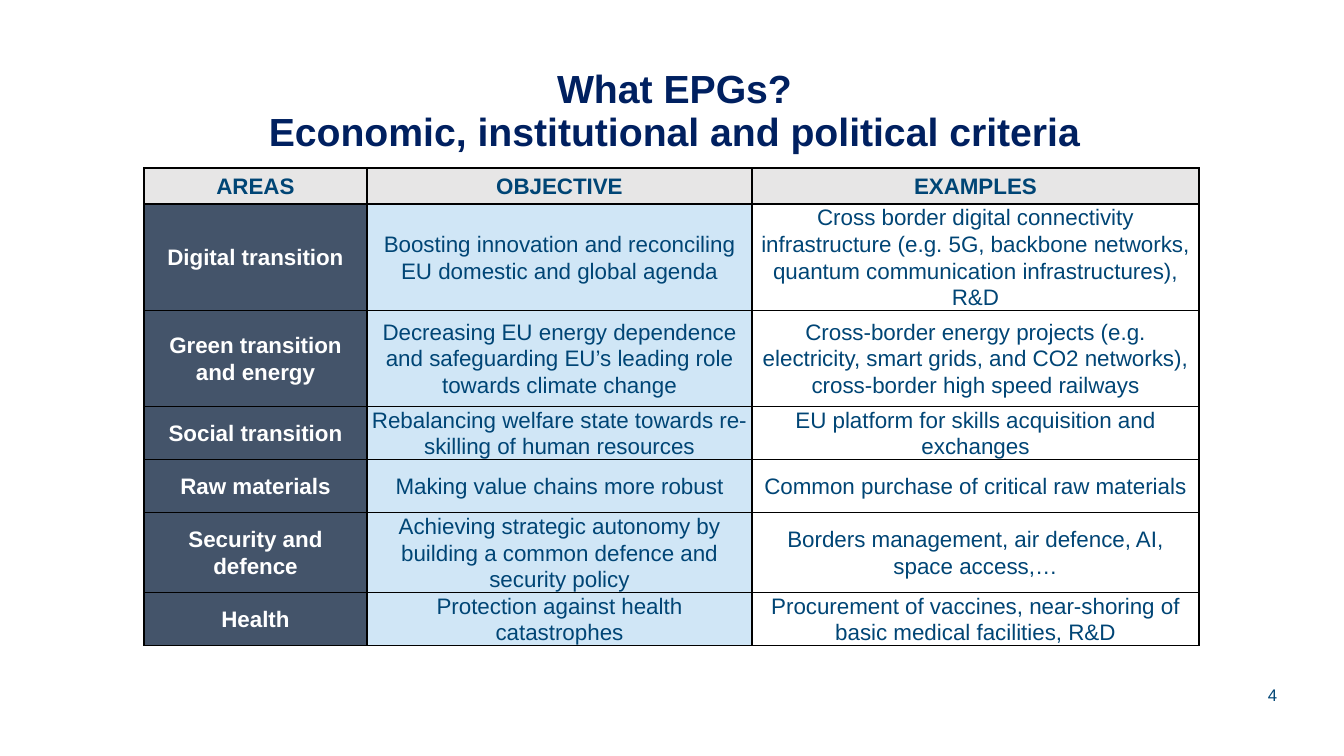
from dataclasses import dataclass

from lxml import etree
from pptx import Presentation, util as u
from pptx.dml.color import RGBColor
from pptx.enum import text
from pptx.oxml import ns

PX_PER_INCH = 100.8


@dataclass(frozen=True)
class Theme:
    font: str = "Arial"
    title: str = "002060"
    ink: str = "004575"
    area_ink: str = "FFFFFF"
    border: str = "000000"
    header_fill: str = "E7E6E6"
    area_fill: str = "44546A"
    objective_fill: str = "D0E6F6"
    title_size: int = 28
    table_size: int = 16
    number_size: int = 12


THEME = Theme()
TITLE = ["What EPGs?", "Economic, institutional and political criteria"]
HEADINGS = ("AREAS", "OBJECTIVE", "EXAMPLES")
PROJECTS = [
    ("Digital transition",
     "Boosting innovation and reconciling EU domestic and global agenda",
     "Cross border digital connectivity infrastructure (e.g. 5G, backbone networks, "
     "quantum communication infrastructures), R&D"),
    ("Green transition and energy",
     "Decreasing EU energy dependence and safeguarding EU’s leading role towards climate change",
     "Cross-border energy projects (e.g. electricity, smart grids, and CO2 networks), "
     "cross-border high speed railways"),
    ("Social transition",
     "Rebalancing welfare state towards re-skilling of human resources",
     "EU platform for skills acquisition and exchanges"),
    ("Raw materials",
     "Making value chains more robust",
     "Common purchase of critical raw materials"),
    ("Security and defence",
     "Achieving strategic autonomy by building a common defence and security policy",
     "Borders management, air defence, AI, space access,…"),
    ("Health",
     "Protection against health catastrophes",
     "Procurement of vaccines, near-shoring of basic medical facilities, R&D"),
]
COLUMN_WIDTHS = (223, 385, 447)
ROW_HEIGHTS = (36, 96, 96, 53, 53, 72, 53)


def px(length):
    return u.Inches(length / PX_PER_INCH)


def style(paragraph, size, color, bold=False, align=text.PP_ALIGN.CENTER):
    paragraph.alignment = align
    paragraph.font.name = THEME.font
    paragraph.font.size = u.Pt(size)
    paragraph.font.bold = bold
    paragraph.font.color.rgb = RGBColor.from_string(color)


def place(shape, box):
    shape.left, shape.top, shape.width, shape.height = map(px, box)


def add_title(slide, box):
    title = slide.shapes.title
    place(title, box)
    frame = title.text_frame
    frame.text = "\n".join(TITLE)
    frame.word_wrap = True
    frame.auto_size = text.MSO_AUTO_SIZE.NONE
    frame.vertical_anchor = text.MSO_ANCHOR.TOP
    frame.margin_left = frame.margin_right = px(7)
    frame.margin_top = frame.margin_bottom = px(4)
    for line in frame.paragraphs:
        style(line, THEME.title_size, THEME.title, bold=True)
        line.line_spacing = 0.9
        line.space_before = u.Pt(0)


def add_borders(cell):
    properties = cell._tc.get_or_add_tcPr()
    for side in ("lnL", "lnR", "lnT", "lnB"):
        line = etree.SubElement(properties, ns.qn(f"a:{side}"), w=str(u.Pt(1)))
        fill = etree.SubElement(line, ns.qn("a:solidFill"))
        etree.SubElement(fill, ns.qn("a:srgbClr"), val=THEME.border)


def fill_cell(cell, wording, fill, ink, bold):
    cell.text = wording
    cell.vertical_anchor = text.MSO_ANCHOR.MIDDLE
    cell.margin_left = cell.margin_right = px(3)
    cell.margin_top = cell.margin_bottom = 0
    paragraph = cell.text_frame.paragraphs[0]
    style(paragraph, THEME.table_size, ink, bold)
    paragraph.line_spacing = 1.07
    paragraph.space_after = u.Pt(6)
    add_borders(cell)
    if fill:
        cell.fill.solid()
        cell.fill.fore_color.rgb = RGBColor.from_string(fill)
    else:
        cell.fill.background()


def add_criteria(slide, box):
    rows = [HEADINGS, *PROJECTS]
    criteria = slide.shapes.add_table(len(rows), len(HEADINGS), *map(px, box)).table
    criteria.horz_banding = False
    criteria.first_row = False
    for column, width in zip(criteria.columns, COLUMN_WIDTHS):
        column.width = px(width)
    for row, height in zip(criteria.rows, ROW_HEIGHTS):
        row.height = px(height)
    header_look = (THEME.header_fill, THEME.ink, True)
    column_looks = (
        (THEME.area_fill, THEME.area_ink, True),
        (THEME.objective_fill, THEME.ink, False),
        (None, THEME.ink, False),
    )
    for r, wordings in enumerate(rows):
        for c, wording in enumerate(wordings):
            look = column_looks[c] if r else header_look
            fill_cell(criteria.cell(r, c), wording, *look)


def add_page_number(slide, box):
    frame = slide.shapes.add_textbox(*map(px, box)).text_frame
    frame.word_wrap = True
    frame.vertical_anchor = text.MSO_ANCHOR.BOTTOM
    frame.text = "4"
    style(frame.paragraphs[0], THEME.number_size, THEME.ink, align=text.PP_ALIGN.RIGHT)


def main():
    deck = Presentation()
    deck.slide_width, deck.slide_height = px(1344), px(756)
    slide = deck.slides.add_slide(deck.slide_layouts.get_by_name("Title Only"))
    add_title(slide, (188, 66, 973, 238))
    add_criteria(slide, (144, 168, sum(COLUMN_WIDTHS), sum(ROW_HEIGHTS)))
    add_page_number(slide, (1238, 670, 49, 40))
    deck.save("out.pptx")


if __name__ == "__main__":
    main()
